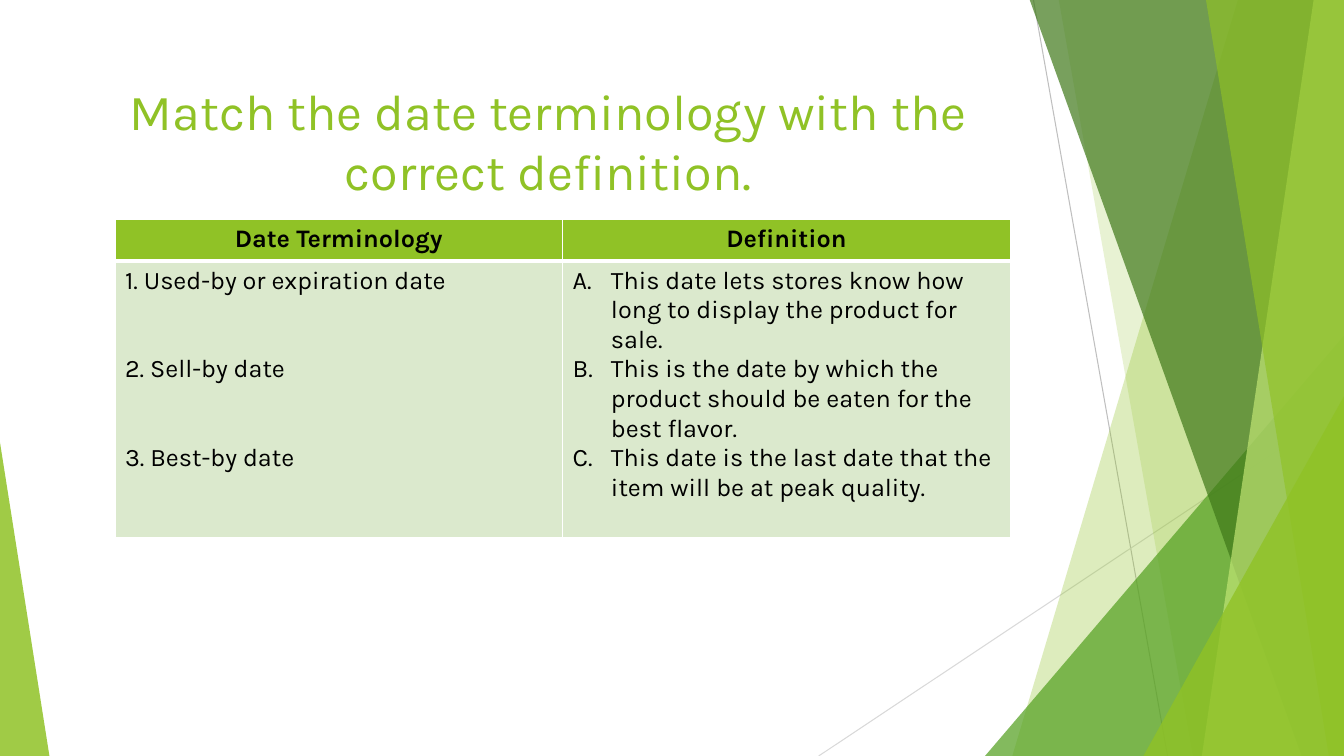
from lxml.etree import SubElement
from pptx import Presentation
from pptx.dml.color import RGBColor
from pptx.enum.shapes import MSO_CONNECTOR, MSO_SHAPE
from pptx.enum.text import MSO_ANCHOR, PP_ALIGN
from pptx.oxml.ns import qn
from pptx.util import Inches, Pt

FONT = "Karla"
LIME = RGBColor(0x90, 0xC2, 0x26)
PALE_LIME = RGBColor(0xC0, 0xE4, 0x74)
GREEN = RGBColor(0x54, 0xA0, 0x21)
DARK_GREEN = RGBColor(0x3F, 0x78, 0x19)
MINT = RGBColor(0xDB, 0xE9, 0xCD)
GRAY = RGBColor(0xBF, 0xBF, 0xBF)
LIGHT_GRAY = RGBColor(0xD9, 0xD9, 0xD9)
BLACK = RGBColor(0, 0, 0)

RIGHT, TOP, BOTTOM = 13.33, -0.01, 7.5

TITLE = "Match the date terminology with the correct definition."
HEADERS = ["Date Terminology", "Definition"]
TERMS = ["1. Used-by or expiration date", "2. Sell-by date", "3. Best-by date"]
DEFINITIONS = [
    "This date lets stores know how long to display the product for sale.",
    "This is the date by which the product should be eaten for the best flavor.",
    "This date is the last date that the item will be at peak quality.",
]


def paint(shape, color, opacity):
    """Fill a shape with a translucent colour, without outline or shadow."""
    shape.shadow.inherit = False
    shape.line.fill.background()
    shape.fill.solid()
    shape.fill.fore_color.rgb = color
    color_xml = shape.fill._xPr.find(qn("a:solidFill"))[0]
    SubElement(color_xml, qn("a:alpha"), val=str(opacity * 1000))


def add_thin_line(slide, start, end, color):
    line = slide.shapes.add_connector(
        MSO_CONNECTOR.STRAIGHT, *[Inches(v) for v in (*start, *end)])
    line.line.color.rgb = color
    line.line.width = Pt(0.75)
    SubElement(line._element.spPr, qn("a:effectLst"))


def add_band(slide, top_left, bottom_left, color, opacity):
    """Full-height band that reaches the right edge of the slide."""
    corners = [(top_left, TOP), (RIGHT, TOP), (RIGHT, BOTTOM), (bottom_left, BOTTOM)]
    points = [(Inches(x), Inches(y)) for x, y in corners]
    builder = slide.shapes.build_freeform(*points[0])
    builder.add_line_segments(points[1:], close=True)
    paint(builder.convert_to_shape(), color, opacity)


def add_corner(slide, left, top, width, apex, color, opacity):
    """Triangle standing on the bottom edge; apex 0 is left, 1 is right."""
    corner = slide.shapes.add_shape(
        MSO_SHAPE.ISOSCELES_TRIANGLE, Inches(left), Inches(top),
        Inches(width), Inches(BOTTOM - top))
    corner.adjustments[0] = apex
    paint(corner, color, opacity)


def style(paragraph, size, color, bold=False):
    for run in paragraph.runs:
        run.font.name = FONT
        run.font.size = Pt(size)
        run.font.bold = bold
        run.font.color.rgb = color


def add_title(slide):
    title = slide.shapes.add_textbox(
        Inches(0.74), Inches(0.67), Inches(9.4), Inches(1.44))
    frame = title.text_frame
    frame.word_wrap = True
    frame.vertical_anchor = MSO_ANCHOR.MIDDLE
    frame.text = TITLE
    frame.paragraphs[0].alignment = PP_ALIGN.CENTER
    style(frame.paragraphs[0], 36, LIME)


def format_cell(cell, color, top_width, bottom_width):
    """White borders first, then the fill, as the schema orders them."""
    properties = cell._tc.get_or_add_tcPr()
    widths = {"lnL": 1, "lnR": 1, "lnT": top_width, "lnB": bottom_width}
    for side, width in widths.items():
        border = SubElement(properties, qn(f"a:{side}"), w=str(Pt(width)))
        SubElement(SubElement(border, qn("a:solidFill")), qn("a:srgbClr"), val="FFFFFF")
    cell.fill.solid()
    cell.fill.fore_color.rgb = color


def write_cell(cell, lines, bold=False, centered=False, lettered=False, gap=0):
    cell.text_frame.text = "\n".join(lines)
    for index, paragraph in enumerate(cell.text_frame.paragraphs):
        if lettered:
            properties = paragraph._p.get_or_add_pPr()
            properties.set("marL", str(Inches(0.38)))
            properties.set("indent", str(-Inches(0.38)))
            SubElement(properties, qn("a:buFont"), typeface=FONT)
            SubElement(properties, qn("a:buAutoNum"), type="alphaUcPeriod")
        if centered:
            paragraph.alignment = PP_ALIGN.CENTER
        if gap and index:
            paragraph.space_before = Pt(gap)
        style(paragraph, 18, BLACK, bold)


def add_matching_table(slide):
    table = slide.shapes.add_table(
        2, 2, Inches(1.14), Inches(2.18), Inches(8.88), Inches(3.15)).table
    table.rows[0].height = Inches(0.41)
    table.rows[1].height = Inches(2.74)
    for column, header in enumerate(HEADERS):
        table.columns[column].width = Inches(4.44)
        format_cell(table.cell(0, column), LIME, 1, 3)
        format_cell(table.cell(1, column), MINT, 3, 1)
        write_cell(table.cell(0, column), [header], bold=True, centered=True)
    # Each term lines up with the first line of a three-line definition
    write_cell(table.cell(1, 0), TERMS, gap=42)
    write_cell(table.cell(1, 1), DEFINITIONS, lettered=True)


def main():
    deck = Presentation()
    deck.slide_width = Inches(RIGHT)
    deck.slide_height = Inches(BOTTOM)
    slide = deck.slides.add_slide(deck.slide_layouts[6])

    # Decorative facets, back to front
    add_thin_line(slide, (10.25, 0), (11.58, BOTTOM), GRAY)
    add_thin_line(slide, (RIGHT, 4.03), (8.12, BOTTOM), LIGHT_GRAY)
    add_band(slide, 12.28, 10.04, LIME, 30)
    add_band(slide, 10.5, 11.83, LIME, 20)
    add_corner(slide, 9.77, 3.33, 3.56, 1, GREEN, 72)
    add_band(slide, 10.21, 12.91, DARK_GREEN, 70)
    add_band(slide, 13.03, 11.92, PALE_LIME, 70)
    add_band(slide, 11.96, 13.18, LIME, 65)
    add_corner(slide, 11.34, 3.93, 1.99, 1, LIME, 80)
    add_corner(slide, 0, 4.39, 0.49, 0, LIME, 85)

    # Content
    add_title(slide)
    add_matching_table(slide)
    deck.save("out.pptx")


if __name__ == "__main__":
    main()
